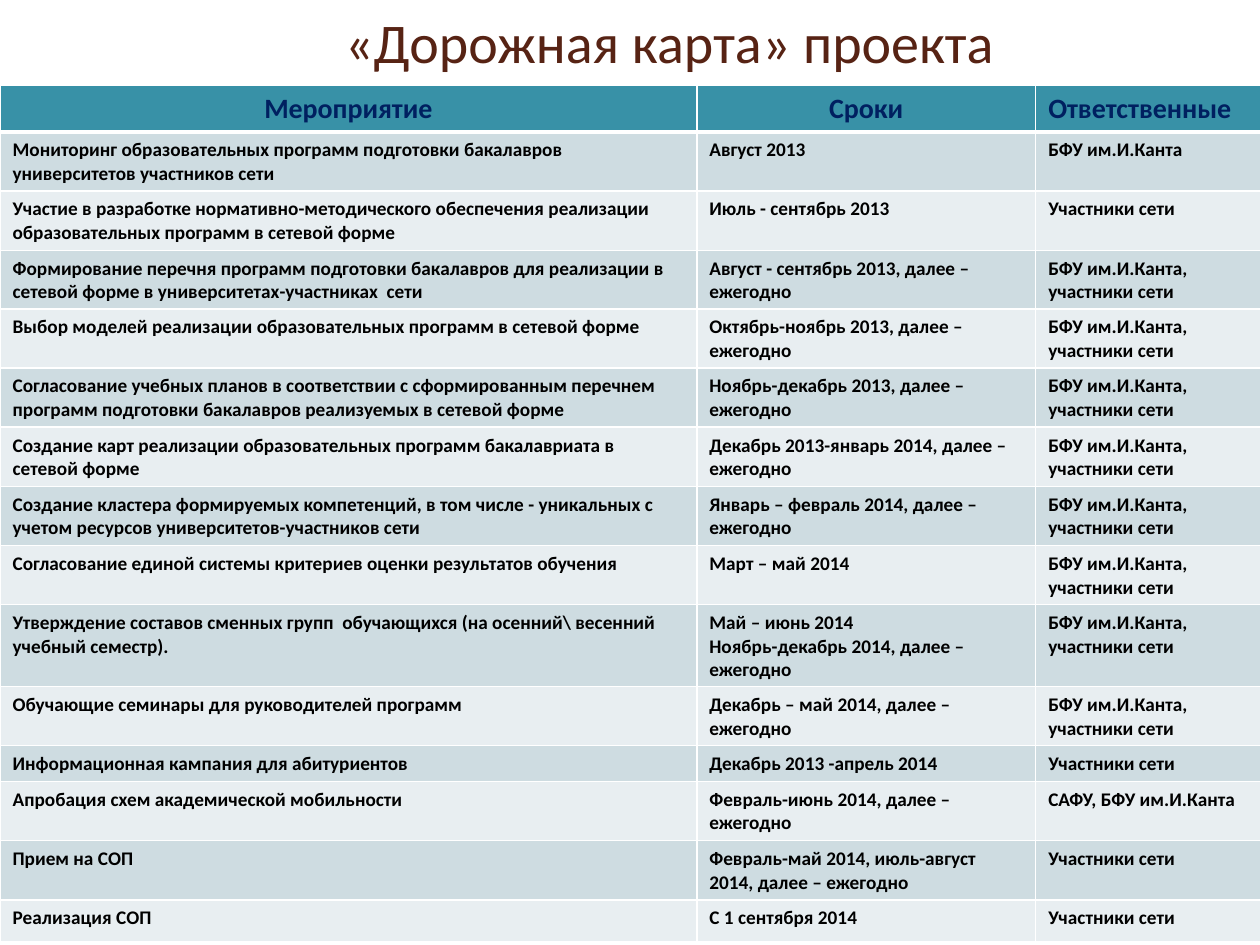
from dataclasses import dataclass

import pptx
import pptx.dml.color
import pptx.enum.text
import pptx.oxml
import pptx.oxml.ns
import pptx.util

CENTER = pptx.enum.text.PP_ALIGN.CENTER
LEFT = pptx.enum.text.PP_ALIGN.LEFT
MIDDLE = pptx.enum.text.MSO_ANCHOR.MIDDLE

SLIDE_WIDTH, SLIDE_HEIGHT = pptx.util.Inches(10), pptx.util.Inches(7.5)
GRID_COLUMNS, GRID_ROWS = 100, 75


@dataclass(frozen=True)
class Theme:
    font: str = "Calibri"
    title_color: str = "572314"
    header_color: str = "002060"
    body_color: str = "000000"
    header_fill: str = "3891A7"
    band_fills: tuple = ("CEDCE1", "E8EEF1")
    border_color: str = "FFFFFF"
    title_size: int = 32
    header_size: int = 16
    body_size: float = 11
    border: int = 1
    header_rule: int = 3


def across(columns):
    return round(SLIDE_WIDTH * columns / GRID_COLUMNS)


def down(rows):
    return round(SLIDE_HEIGHT * rows / GRID_ROWS)


class SlideBuilder:
    def __init__(self, slide, theme):
        self.slide = slide
        self.theme = theme

    def set_text(self, frame, text, size, color, bold=False, align=LEFT):
        frame.text = text
        for paragraph in frame.paragraphs:
            paragraph.alignment = align
            font = paragraph.font
            font.name, font.size, font.bold = self.theme.font, pptx.util.Pt(size), bold
            font.color.rgb = pptx.dml.color.RGBColor.from_string(color)

    def title(self, text, left, top, width, height):
        box = self.slide.shapes.add_textbox(across(left), down(top), across(width), down(height))
        frame = box.text_frame
        frame.word_wrap = True
        frame.vertical_anchor = MIDDLE
        self.set_text(frame, text, self.theme.title_size, self.theme.title_color, align=CENTER)

    def borders(self, cell, top, bottom):
        """Draw all four cell borders; this must come before the cell's fill."""
        properties = cell._tc.get_or_add_tcPr()
        side = self.theme.border
        for tag, points in (("lnL", side), ("lnR", side), ("lnT", top), ("lnB", bottom)):
            properties.append(pptx.oxml.parse_xml(
                f'<a:{tag} {pptx.oxml.ns.nsdecls("a")} w="{pptx.util.Pt(points)}">'
                f'<a:solidFill><a:srgbClr val="{self.theme.border_color}"/></a:solidFill>'
                f'</a:{tag}>'))

    def cell(self, cell, fill, top, bottom, **text):
        self.borders(cell, top, bottom)
        cell.fill.solid()
        cell.fill.fore_color.rgb = pptx.dml.color.RGBColor.from_string(fill)
        self.set_text(cell.text_frame, bold=True, **text)

    def schedule(self, headings, activities, left, top, height, widths, header_height):
        """Add the table; each activity starts with its row height in grid rows."""
        theme = self.theme
        frame = self.slide.shapes.add_table(
            len(activities) + 1, len(widths),
            across(left), down(top), across(sum(widths)), down(height))
        table = frame.table
        for column, width in zip(table.columns, widths):
            column.width = across(width)
        table.rows[0].height = down(header_height)
        for index, (heading, align) in enumerate(headings):
            self.cell(table.cell(0, index), theme.header_fill, theme.border, theme.header_rule,
                      text=heading, size=theme.header_size, color=theme.header_color, align=align)
        for number, (row_height, *entries) in enumerate(activities, start=1):
            table.rows[number].height = down(row_height)
            fill = theme.band_fills[(number - 1) % 2]
            upper = theme.header_rule if number == 1 else theme.border
            for index, entry in enumerate(entries):
                self.cell(table.cell(number, index), fill, upper, theme.border,
                          text=entry, size=theme.body_size, color=theme.body_color)
        frame.height = down(height)


KANT = "БФУ им.И.Канта"
MEMBERS = "Участники сети"
KANT_AND_MEMBERS = f"{KANT}, участники сети"

HEADINGS = [("Мероприятие", CENTER), ("Сроки", CENTER), ("Ответственные", LEFT)]

ACTIVITIES = [
    (4.7, "Мониторинг образовательных программ подготовки бакалавров университетов участников сети",
     "Август 2013", KANT),
    (4.7, "Участие в разработке нормативно-методического обеспечения реализации "
     "образовательных программ в сетевой форме",
     "Июль - сентябрь 2013", MEMBERS),
    (4.3, "Формирование перечня программ подготовки бакалавров для реализации "
     "в сетевой форме в университетах-участниках  сети",
     "Август - сентябрь 2013, далее – ежегодно", KANT_AND_MEMBERS),
    (3.6, "Выбор моделей реализации образовательных программ в сетевой форме",
     "Октябрь-ноябрь 2013, далее – ежегодно", KANT_AND_MEMBERS),
    (4.7, "Согласование учебных планов в соответствии с сформированным перечнем "
     "программ подготовки бакалавров реализуемых в сетевой форме",
     "Ноябрь-декабрь 2013, далее – ежегодно", KANT_AND_MEMBERS),
    (4.7, "Создание карт реализации образовательных программ бакалавриата в сетевой форме",
     "Декабрь 2013-январь 2014, далее – ежегодно", KANT_AND_MEMBERS),
    (4.7, "Создание кластера формируемых компетенций, в том числе - уникальных "
     "с учетом ресурсов университетов-участников сети",
     "Январь – февраль 2014, далее – ежегодно", KANT_AND_MEMBERS),
    (2.8, "Согласование единой системы критериев оценки результатов обучения",
     "Март – май 2014", KANT_AND_MEMBERS),
    (6.5, "Утверждение составов сменных групп  обучающихся (на осенний\\ весенний учебный семестр).",
     "Май – июнь 2014\nНоябрь-декабрь 2014, далее – ежегодно", KANT_AND_MEMBERS),
    (4.7, "Обучающие семинары для руководителей программ",
     "Декабрь – май 2014, далее – ежегодно", KANT_AND_MEMBERS),
    (2.8, "Информационная кампания для абитуриентов",
     "Декабрь 2013 -апрель 2014", MEMBERS),
    (4.7, "Апробация схем академической мобильности",
     "Февраль-июнь 2014, далее – ежегодно", f"САФУ, {KANT}"),
    (4.7, "Прием на СОП",
     "Февраль-май 2014, июль-август 2014, далее – ежегодно", MEMBERS),
    (3.3, "Реализация СОП", "С 1 сентября 2014", MEMBERS),
]


def main():
    presentation = pptx.Presentation()
    presentation.slide_width, presentation.slide_height = SLIDE_WIDTH, SLIDE_HEIGHT
    blank = presentation.slide_layouts[6]
    roadmap = SlideBuilder(presentation.slides.add_slide(blank), Theme())
    roadmap.title("«Дорожная карта» проекта", left=7.5, top=0.5, width=91.3, height=5.5)
    roadmap.schedule(HEADINGS, ACTIVITIES, left=0, top=6.8, height=67.6,
                     widths=(55.3, 26.9, 17.9), header_height=1.7)
    presentation.save("out.pptx")


if __name__ == "__main__":
    main()
